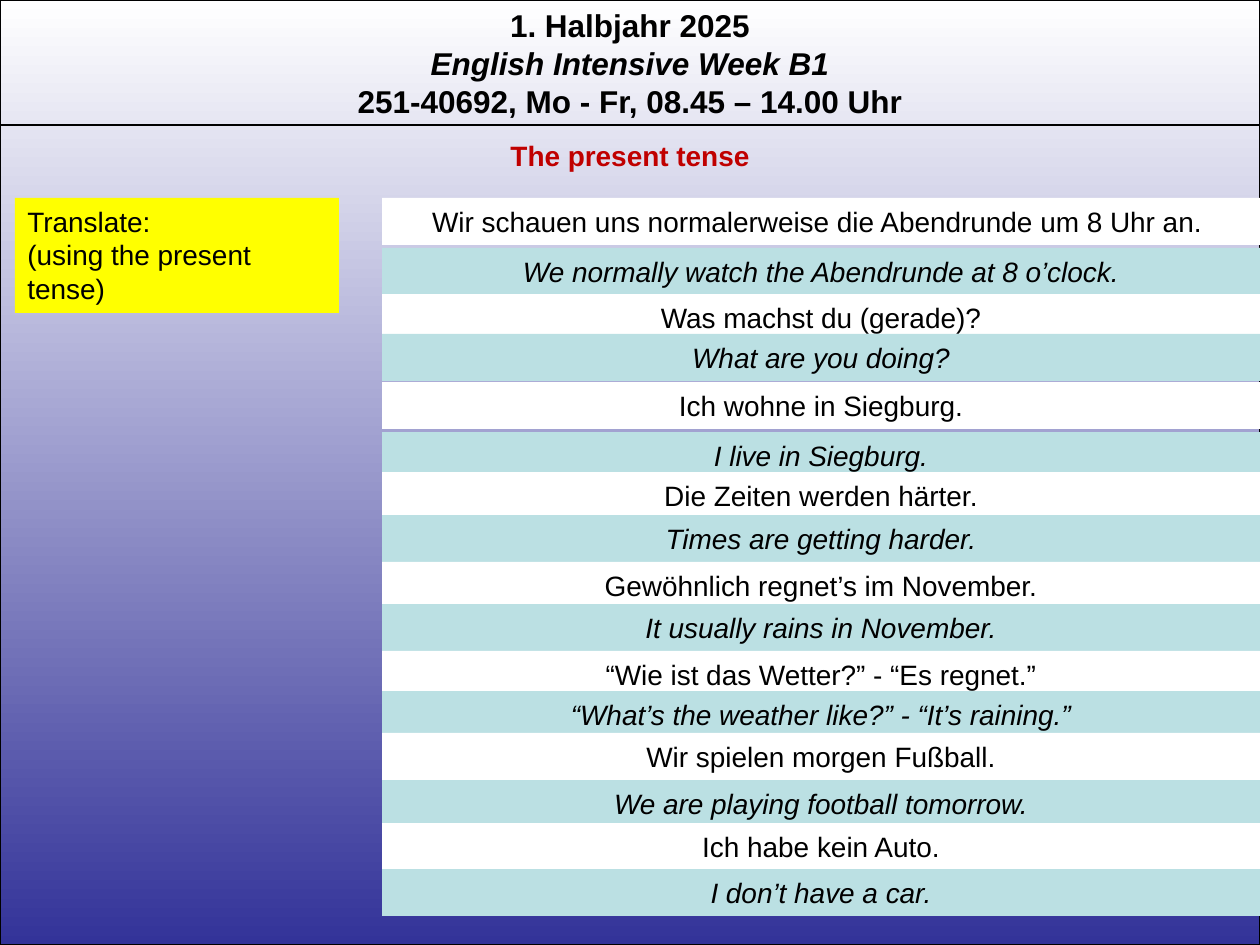
from lxml import etree
from pptx import Presentation
from pptx import util as u
from pptx.dml.color import RGBColor
from pptx.enum import shapes, text
from pptx.oxml.ns import qn

EMU_PER_PX = 914400 / 126
WIDTH, HEIGHT = 1260, 945
ROW_LEFT, ROW_HEIGHT = 382, 47
GERMAN_FILL, ENGLISH_FILL = "FFFFFF", "BBE0E3"

# Top of each pair's boxes, German sentence, English translation
SENTENCES = [
    (198, "Wir schauen uns normalerweise die Abendrunde um 8 Uhr an. ",
     248, "We normally watch the Abendrunde at 8 o’clock."),
    (294, "Was machst du (gerade)?", 334, "What are you doing?"),
    (382, "Ich wohne in Siegburg.", 432, "I live in Siegburg."),
    (472, "Die Zeiten werden härter.", 515, "Times are getting harder."),
    (562, "Gewöhnlich regnet’s im November.", 604, "It usually rains in November."),
    (651, "“Wie ist das Wetter?” - “Es regnet.”",
     691, "“What’s the weather like?” - “It’s raining.”"),
    (733, "Wir spielen morgen Fußball.", 780, "We are playing football tomorrow."),
    (823, "Ich habe kein Auto.", 869, "I don’t have a car."),
]


def px(*lengths):
    return [u.Emu(round(length * EMU_PER_PX)) for length in lengths]


def color(value):
    return RGBColor.from_string(value)


def write(paragraph, words, size=16, font="Arial", ink="000000",
          bold=False, italic=False, align=text.PP_ALIGN.CENTER):
    paragraph.alignment = align
    run = paragraph.add_run()
    run.text = words
    run.font.size = u.Pt(size)
    run.font.name = font
    run.font.color.rgb = color(ink)
    run.font.bold = bold
    run.font.italic = italic


class SlideBuilder:
    def __init__(self, slide, line_color="000000", line_width=0.75):
        self.slide = slide
        self.line_color = line_color
        self.line_width = u.Pt(line_width)

    def outline(self, line):
        line.color.rgb = color(self.line_color)
        line.width = self.line_width

    def fill_frame(self, shape, lines):
        """Write lines, each a pair of words and format, from the top."""
        frame = shape.text_frame
        frame.word_wrap = True
        frame.vertical_anchor = text.MSO_ANCHOR.TOP
        frame.auto_size = text.MSO_AUTO_SIZE.SHAPE_TO_FIT_TEXT
        for index, (words, style) in enumerate(lines):
            paragraph = frame.add_paragraph() if index else frame.paragraphs[0]
            write(paragraph, words, **style)

    def rectangle(self, left, top, width, height):
        shape = self.slide.shapes.add_shape(
            shapes.MSO_SHAPE.RECTANGLE, *px(left, top, width, height))
        shape.shadow.inherit = False
        return shape

    def gradient_panel(self, box, colors):
        shape = self.rectangle(*box)
        shape.fill.gradient()
        shape.fill.gradient_angle = 270
        for stop, value in zip(shape.fill.gradient_stops, colors):
            stop.color.rgb = color(value)
        self.outline(shape.line)

    def filled_box(self, box, fill, lines):
        shape = self.rectangle(*box)
        shape.fill.solid()
        shape.fill.fore_color.rgb = color(fill)
        shape.line.fill.background()
        self.fill_frame(shape, lines)

    def text_box(self, box, lines):
        self.fill_frame(self.slide.shapes.add_textbox(*px(*box)), lines)

    def title(self, box, lines):
        title = self.slide.shapes.title
        title.left, title.top, title.width, title.height = px(*box)
        self.fill_frame(title, lines)
        # Bring the title in front of the background panel
        title.element.getparent().append(title.element)

    def rule(self, left, top, right, bottom):
        connector = self.slide.shapes.add_connector(
            shapes.MSO_CONNECTOR.STRAIGHT, *px(left, top, right, bottom))
        self.outline(connector.line)
        etree.SubElement(connector.element.spPr, qn("a:effectLst"))


def main():
    presentation = Presentation()
    presentation.slide_width, presentation.slide_height = px(WIDTH, HEIGHT)
    slide = presentation.slides.add_slide(presentation.slide_layouts[5])
    builder = SlideBuilder(slide)

    # Background and course header
    builder.gradient_panel((0, 0, WIDTH, HEIGHT), ("FFFFFF", "333399"))
    header = {"size": 18, "bold": True}
    builder.text_box((0, 0, WIDTH, 127), [
        ("1. Halbjahr 2025", header),
        ("English Intensive Week B1", {**header, "italic": True}),
        ("251-40692, Mo - Fr, 08.45 – 14.00 Uhr", header),
    ])
    builder.rule(0, 125, WIDTH, 125)

    # Topic and task
    builder.title((0, 132, WIDTH, ROW_HEIGHT),
                  [("The present tense", {"ink": "C00000", "bold": True})])
    task = {"align": text.PP_ALIGN.LEFT}
    builder.filled_box((15, 198, 324, 115), "FFFF00", [
        ("Translate:", task), ("(using the present tense)", task)])

    # Sentences with their translations
    for german_top, german, english_top, english in SENTENCES:
        for top, words, fill, italic in (
                (german_top, german, GERMAN_FILL, False),
                (english_top, english, ENGLISH_FILL, True)):
            builder.filled_box((ROW_LEFT, top, WIDTH - ROW_LEFT, ROW_HEIGHT),
                               fill, [(words, {"italic": italic})])

    presentation.save("out.pptx")


if __name__ == "__main__":
    main()
